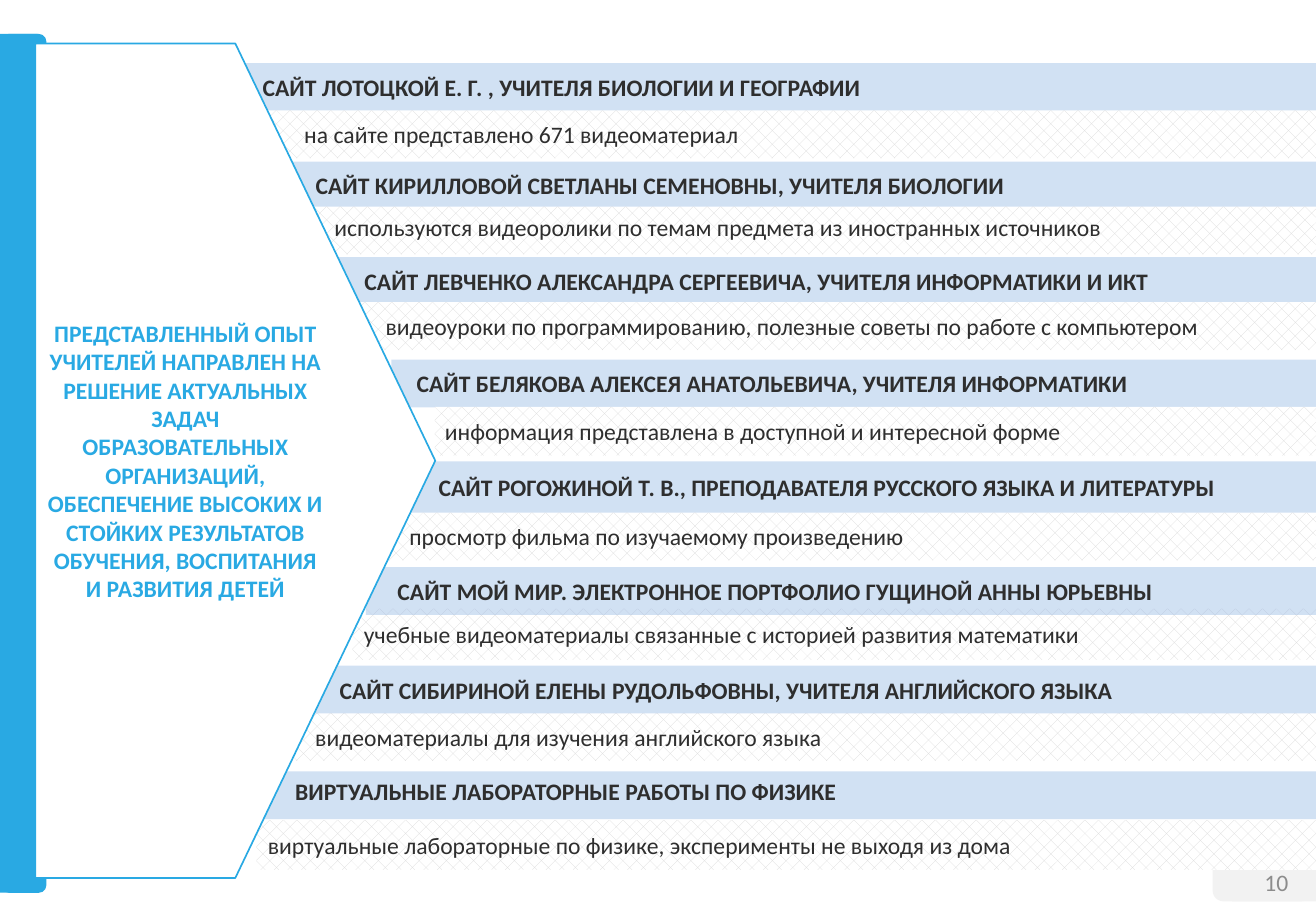
"""Build the slide listing teachers' sites beside a pentagon with the main idea."""
import dataclasses

import lxml.etree
import pptx
import pptx.dml.color
import pptx.enum.dml
import pptx.enum.shapes
import pptx.enum.text
import pptx.oxml.ns
import pptx.shapes.autoshape
import pptx.slide
import pptx.util

Cm = pptx.util.Cm
SHAPE = pptx.enum.shapes.MSO_SHAPE
ALIGN = pptx.enum.text.PP_ALIGN
ANCHOR = pptx.enum.text.MSO_ANCHOR

WIDTH, HEIGHT = 27.51, 19.05
COLORS = {
    "accent": "29A9E3",
    "band": "8EB4E3",
    "hatch": "D9D9D9",
    "tab": "F2F2F2",
    "white": "FFFFFF",
    "text": "2E2E2E",
    "number": "8C8C8C",
}
BAND_OPACITY = 40


@dataclasses.dataclass
class Band:
    """A strip running to the right edge; text_left is measured from the slide edge."""
    text: str
    left: float
    top: float
    text_left: float
    height: float = 1.0
    anchor: ANCHOR = ANCHOR.MIDDLE


@dataclasses.dataclass
class Site:
    """A site title and its description."""
    title: Band
    detail: Band


SITES = [
    Site(Band("САЙТ ЛОТОЦКОЙ Е. Г. , УЧИТЕЛЯ БИОЛОГИИ И ГЕОГРАФИИ", 3.71, 1.32, 5.49),
         Band("на сайте представлено 671 видеоматериал", 4.93, 2.31, 6.36)),
    Site(Band("САЙТ КИРИЛЛОВОЙ СВЕТЛАНЫ СЕМЕНОВНЫ, УЧИТЕЛЯ БИОЛОГИИ", 5.72, 3.38, 6.6),
         Band("используются видеоролики по темам предмета из иностранных источников",
              6.55, 4.32, 6.99, anchor=ANCHOR.TOP)),
    Site(Band("САЙТ ЛЕВЧЕНКО АЛЕКСАНДРА СЕРГЕЕВИЧА, УЧИТЕЛЯ ИНФОРМАТИКИ И ИКТ",
              6.96, 5.38, 7.62),
         Band("видеоуроки по программированию, полезные советы по работе с компьютером",
              7.06, 6.32, 8.06)),
    Site(Band("САЙТ БЕЛЯКОВА АЛЕКСЕЯ АНАТОЛЬЕВИЧА, УЧИТЕЛЯ ИНФОРМАТИКИ", 8.18, 7.52, 8.71),
         Band("информация представлена в доступной и интересной форме",
              9.09, 8.51, 9.3, 1.02)),
    Site(Band("САЙТ РОГОЖИНОЙ Т. В., ПРЕПОДАВАТЕЛЯ РУССКОГО ЯЗЫКА И ЛИТЕРАТУРЫ",
              8.18, 9.65, 9.17, 1.09),
         Band("просмотр фильма по изучаемому произведению", 8.0, 10.72, 8.56)),
    Site(Band("САЙТ МОЙ МИР. ЭЛЕКТРОННОЕ ПОРТФОЛИО ГУЩИНОЙ АННЫ ЮРЬЕВНЫ",
              7.65, 11.86, 8.31),
         Band("учебные видеоматериалы связанные с историей развития математики",
              7.37, 12.73, 7.61, 1.07)),
    Site(Band("САЙТ СИБИРИНОЙ ЕЛЕНЫ РУДОЛЬФОВНЫ, УЧИТЕЛЯ АНГЛИЙСКОГО ЯЗЫКА",
              6.22, 13.92, 7.1),
         Band("видеоматериалы для изучения английского языка", 4.93, 14.91, 6.59)),
    Site(Band("ВИРТУАЛЬНЫЕ ЛАБОРАТОРНЫЕ РАБОТЫ ПО ФИЗИКЕ",
              5.05, 16.13, 6.17, anchor=ANCHOR.TOP),
         Band("виртуальные лабораторные по физике, эксперименты не выходя из дома",
              5.36, 17.15, 5.6, 1.04)),
]
UPPER_COUNT = 5
MAIN_IDEA = ("ПРЕДСТАВЛЕННЫЙ ОПЫТ УЧИТЕЛЕЙ НАПРАВЛЕН НА РЕШЕНИЕ АКТУАЛЬНЫХ ЗАДАЧ "
             "ОБРАЗОВАТЕЛЬНЫХ ОРГАНИЗАЦИЙ, ОБЕСПЕЧЕНИЕ ВЫСОКИХ И СТОЙКИХ РЕЗУЛЬТАТОВ "
             "ОБУЧЕНИЯ, ВОСПИТАНИЯ И РАЗВИТИЯ ДЕТЕЙ")


def rgb(name: str) -> pptx.dml.color.RGBColor:
    """Return the named colour."""
    return pptx.dml.color.RGBColor.from_string(COLORS[name])


def add_shape(s: pptx.slide.Slide, kind: SHAPE, left: float, top: float,
              width: float, height: float, color: str) -> pptx.shapes.autoshape.Shape:
    """Add a flat filled shape without an outline."""
    sp = s.shapes.add_shape(kind, Cm(left), Cm(top), Cm(width), Cm(height))
    sp.shadow.inherit = False
    sp.fill.solid()
    sp.fill.fore_color.rgb = rgb(color)
    sp.line.fill.background()
    return sp


def write(sp: pptx.shapes.autoshape.Shape, text: str, color: str, bold: bool,
          align: ALIGN, anchor: ANCHOR = ANCHOR.MIDDLE) -> None:
    """Put one formatted paragraph into a shape."""
    tf = sp.text_frame
    tf.text = text
    tf.word_wrap = True
    tf.vertical_anchor = anchor
    p = tf.paragraphs[0]
    p.alignment = align
    font = p.runs[0].font
    font.name = "Calibri"
    font.size = pptx.util.Pt(14)
    font.bold = bold
    font.color.rgb = rgb(color)


def add_band(s: pptx.slide.Slide, band: Band, is_title: bool) -> None:
    """Add a translucent title strip or a hatched description strip."""
    sp = add_shape(s, SHAPE.RECTANGLE, band.left, band.top,
                   WIDTH - band.left, band.height, "band")
    if is_title:
        color = sp.fill._xPr.find(".//" + pptx.oxml.ns.qn("a:srgbClr"))
        alpha = lxml.etree.SubElement(color, pptx.oxml.ns.qn("a:alpha"))
        alpha.set("val", str(BAND_OPACITY * 1000))
    else:
        sp.fill.patterned()
        sp.fill.pattern = pptx.enum.dml.MSO_PATTERN.PERCENT_25
        sp.fill.fore_color.rgb = rgb("hatch")
        sp.fill.back_color.rgb = rgb("white")
    write(sp, band.text, "text", is_title, ALIGN.LEFT, band.anchor)
    sp.text_frame.margin_left = Cm(band.text_left - band.left)


def main() -> None:
    """Draw the slide and save it."""
    prs = pptx.Presentation()
    prs.slide_width, prs.slide_height = Cm(WIDTH), Cm(HEIGHT)
    s = prs.slides.add_slide(prs.slide_layouts[6])

    add_shape(s, SHAPE.ROUNDED_RECTANGLE, 25.35, 17.48, 2.08, 1.37, "tab")
    add_shape(s, SHAPE.RECTANGLE, 25.76, 17.48, 1.75, 1.37, "tab")
    add_shape(s, SHAPE.ROUNDED_RECTANGLE, 0.03, 0.71, 0.94, 17.96, "accent")
    add_shape(s, SHAPE.RECTANGLE, 0, 0.71, 0.79, 17.96, "accent")

    for site in SITES[UPPER_COUNT:]:
        add_band(s, site.detail, False)
    for site in SITES:
        add_band(s, site.title, True)
    for site in SITES[:UPPER_COUNT]:
        add_band(s, site.detail, False)

    number = s.shapes.add_textbox(Cm(25.81), Cm(17.93), Cm(1.75), Cm(1.02))
    write(number, "10", "number", False, ALIGN.CENTER)

    pentagon = add_shape(s, SHAPE.PENTAGON, 0.74, 0.91, 8.36, 17.45, "white")
    pentagon.line.color.rgb = rgb("accent")
    pentagon.line.width = pptx.util.Pt(1)
    write(pentagon, MAIN_IDEA, "accent", True, ALIGN.CENTER)

    prs.save("out.pptx")


if __name__ == "__main__":
    main()
